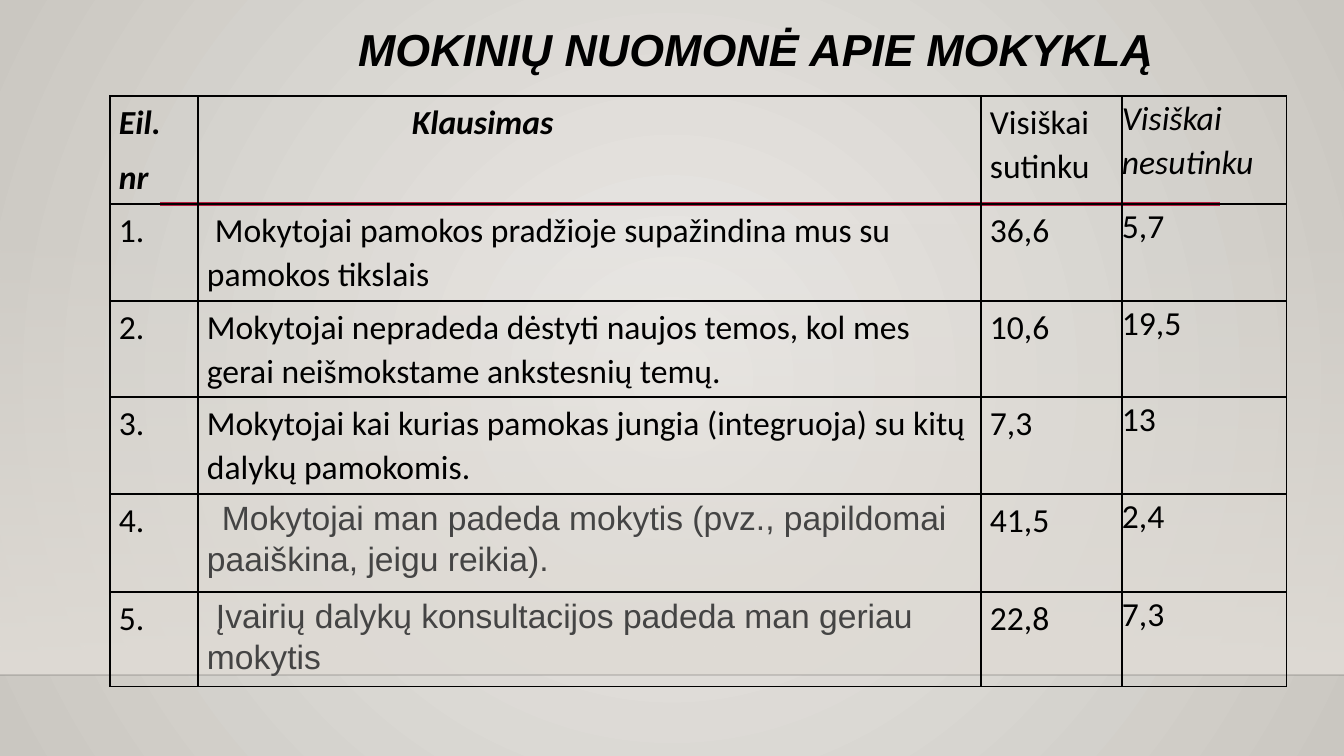
from dataclasses import dataclass

from lxml.etree import SubElement
from pptx import Presentation
from pptx.dml.color import RGBColor
from pptx.enum.shapes import MSO_CONNECTOR as Connector, MSO_SHAPE as Shape
from pptx.enum.text import MSO_ANCHOR as Anchor, PP_ALIGN as Align
from pptx.oxml import parse_xml
from pptx.oxml.ns import nsdecls, qn
from pptx.util import Pt

# Content
TITLE = "MOKINIŲ NUOMONĖ APIE MOKYKLĄ"
HEADER = (["Eil.", "nr"], ["Klausimas"], ["Visiškai sutinku"], ["Visiškai nesutinku"])
ANSWERS = [  # question, agree, disagree, first-line indent in px, web style
    ("Mokytojai pamokos pradžioje supažindina mus su pamokos tikslais",
     "36,6", "5,7", 8, False),
    ("Mokytojai nepradeda dėstyti naujos temos, kol mes gerai neišmokstame "
     "ankstesnių temų.", "10,6", "19,5", 0, False),
    ("Mokytojai kai kurias pamokas jungia (integruoja) su kitų dalykų pamokomis.",
     "7,3", "13", 0, False),
    ("Mokytojai man padeda mokytis (pvz., papildomai paaiškina, jeigu reikia).",
     "41,5", "2,4", 15, True),
    ("Įvairių dalykų konsultacijos padeda man geriau mokytis",
     "22,8", "7,3", 9, True),
]


# Theme and layout
@dataclass(frozen=True)
class Theme:
    ink: str = "000000"
    web_ink: str = "444444"
    accent: str = "B71E42"
    floor: str = "000001"
    glow: str = "ECEAE7"
    edge: str = "CAC7C1"
    veil: str = "DFDBD5"
    title_font: str = "Arial"
    body_font: str = "Calibri"
    title_size: int = 32
    body_size: int = 24


THEME = Theme()
WIDTH, HEIGHT = 1344, 756
FLOOR_Y, VEIL_TOP = 675, 223
TABLE_LEFT, TABLE_TOP = 110, 96
COLUMNS = [88, 783, 141, 165]
ROWS = [108, 97, 96, 97, 98, 89]
HEADING_INDENT = 205
CELL_INSETS = (9, 4, 9, 4)


def px(length):
    return round(length * 914400 / 100.8)


def add_span(para, text, font, size, color, bold=False, italic=False):
    span = para.add_run()
    span.text = text
    span.font.name, span.font.size = font, Pt(size)
    span.font.bold, span.font.italic = bold, italic
    span.font.color.rgb = RGBColor.from_string(color)


def set_insets(box, insets):
    (box.margin_left, box.margin_top,
     box.margin_right, box.margin_bottom) = map(px, insets)


def set_stops(fill, *colors):
    fill.gradient()
    for stop, color in zip(fill.gradient_stops, colors):
        stop.color.rgb = RGBColor.from_string(color)


def set_alpha(color_node, percent):
    SubElement(color_node, qn("a:alpha")).set("val", str(percent * 1000))


def add_rule(page, left, right, y, color, points):
    rule = page.shapes.add_connector(Connector.STRAIGHT, px(left), px(y), px(right), px(y))
    rule.line.color.rgb = RGBColor.from_string(color)
    rule.line.width = Pt(points)
    SubElement(rule._element.spPr, qn("a:effectLst"))
    return rule


def add_borders(cell):
    properties = cell._tc.get_or_add_tcPr()
    for position, side in enumerate("LRTB"):
        properties.insert(position, parse_xml(
            f'<a:ln{side} {nsdecls("a")} w="12700"><a:solidFill>'
            f'<a:srgbClr val="{THEME.ink}"/></a:solidFill></a:ln{side}>'))


def fill_cell(cell, lines, insets, indent=0, web=False, bold=False, italic=False):
    cell.fill.background()
    add_borders(cell)
    set_insets(cell, insets)
    font = THEME.title_font if web else THEME.body_font
    color = THEME.web_ink if web else THEME.ink
    for number, line in enumerate(lines):
        frame = cell.text_frame
        para = frame.add_paragraph() if number else frame.paragraphs[0]
        para.line_spacing, para.space_after = 1.07, Pt(8)
        if indent:
            para._p.get_or_add_pPr().set("marL", "0")
            para._p.get_or_add_pPr().set("indent", str(px(indent)))
        add_span(para, line, font, THEME.body_size, color, bold, italic)


def add_backdrop(page):
    set_stops(page.background.fill, THEME.glow, THEME.edge)
    gradient = page._element.xpath(".//p:bg//a:gradFill")[0]
    direction = gradient.find(qn("a:lin"))
    gradient.replace(direction, parse_xml(
        f'<a:path {nsdecls("a")} path="circle">'
        '<a:fillToRect l="50000" t="50000" r="50000" b="50000"/></a:path>'))

    veil = page.shapes.add_shape(
        Shape.RECTANGLE, 0, px(VEIL_TOP), px(WIDTH), px(FLOOR_Y - VEIL_TOP))
    veil.shadow.inherit = False
    veil.line.fill.background()
    set_stops(veil.fill, THEME.veil, THEME.veil)
    veil.fill.gradient_angle = 270
    set_alpha(veil._element.xpath(".//a:gs/a:srgbClr")[0], 0)

    floor = add_rule(page, 0, WIDTH, FLOOR_Y, THEME.floor, 1)
    set_alpha(floor._element.xpath(".//a:ln//a:srgbClr")[0], 20)
    add_rule(page, 160, 1220, 204, THEME.accent, 2.5)


def add_title(page):
    box = page.shapes.add_textbox(px(162), 0, px(1172), px(145))
    frame = box.text_frame
    frame.word_wrap = True
    frame.vertical_anchor = Anchor.TOP
    set_insets(frame, (26, 28, 10, 5))
    para = frame.paragraphs[0]
    para.alignment, para.line_spacing = Align.CENTER, 0.9
    add_span(para, TITLE, THEME.title_font, THEME.title_size, THEME.ink, True, True)


def add_answers(page):
    table = page.shapes.add_table(
        len(ROWS), len(COLUMNS), px(TABLE_LEFT), px(TABLE_TOP),
        px(sum(COLUMNS)), px(sum(ROWS))).table
    table.first_row = table.horz_banding = False
    for column, width in zip(table.columns, COLUMNS):
        column.width = px(width)
    for row, height in zip(table.rows, ROWS):
        row.height = px(height)

    # The last column has no insets
    insets = [CELL_INSETS] * 3 + [(0, 0, 0, 0)]
    for index, lines in enumerate(HEADER):
        fill_cell(table.cell(0, index), lines, insets[index],
                  indent=HEADING_INDENT if index == 1 else 0,
                  bold=index < 2, italic=index != 2)
    for number, (question, agree, disagree, indent, web) in enumerate(ANSWERS, 1):
        for index, text in enumerate((f"{number}.", question, agree, disagree)):
            is_question = index == 1
            fill_cell(table.cell(number, index), [text], insets[index],
                      indent=indent if is_question else 0, web=web and is_question)


def main():
    deck = Presentation()
    deck.slide_width, deck.slide_height = px(WIDTH), px(HEIGHT)
    page = deck.slides.add_slide(deck.slide_layouts[6])
    add_backdrop(page)
    add_title(page)
    add_answers(page)
    deck.save("out.pptx")


if __name__ == "__main__":
    main()
